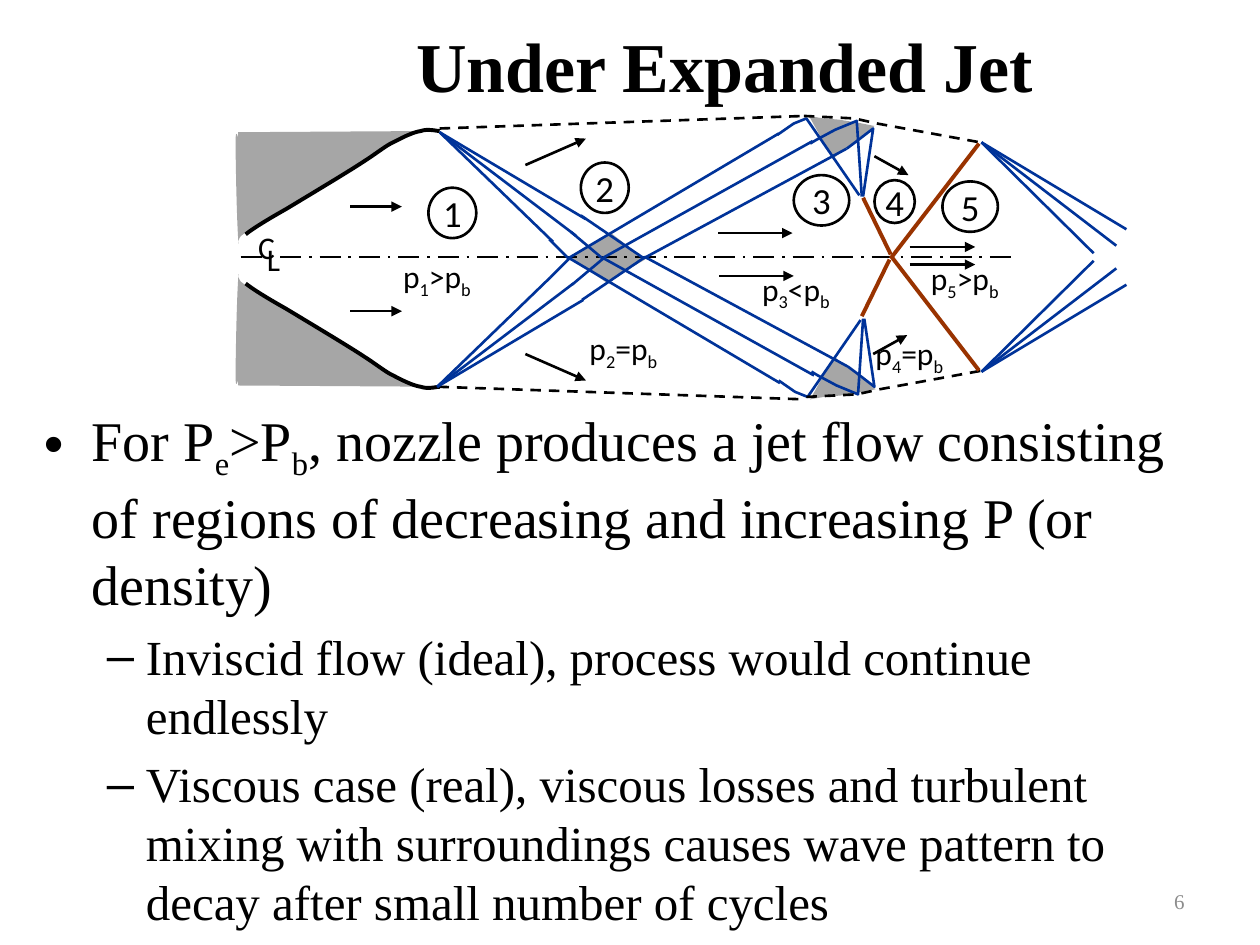
from dataclasses import dataclass

from lxml import etree
from pptx import Presentation
from pptx.dml.color import RGBColor
from pptx.enum.dml import MSO_LINE
from pptx.enum.shapes import MSO_CONNECTOR, MSO_SHAPE
from pptx.enum.text import MSO_ANCHOR, PP_ALIGN
from pptx.oxml.ns import qn
from pptx.util import Cm, Pt

STRAIGHT, ELLIPSE = MSO_CONNECTOR.STRAIGHT, MSO_SHAPE.OVAL
DASH, CENTRE_DASH = MSO_LINE.DASH, MSO_LINE.LONG_DASH_DOT
TOP, MIDDLE = MSO_ANCHOR.TOP, MSO_ANCHOR.MIDDLE
LEFT, CENTER, RIGHT = PP_ALIGN.LEFT, PP_ALIGN.CENTER, PP_ALIGN.RIGHT
SERIF, SANS = "Times New Roman", "Calibri"
COLORS = {"black": "000000", "white": "FFFFFF", "gray": "A6A6A6",
          "wave": "003399", "shock": "993300", "number": "8C8C8C"}
CURVE_STEPS = 8


@dataclass
class Stroke:
    """A line above the axis; its twin has y = mirror - y and x moved by shift."""
    points: list
    mirror: float = 0
    shift: float = 0
    color: str = "wave"
    width: float = 1.5
    dash: object = None
    arrow: bool = False


@dataclass
class Area:
    """A gray region and the rule for its twin below the axis."""
    points: list
    mirror: float = 0
    shift: float = 0


@dataclass
class Region:
    """A numbered ellipse."""
    number: str
    left: float
    top: float
    width: float
    height: float = 0.4


@dataclass
class Label:
    """A text box; every second part between bars is a subscript."""
    text: str
    left: float
    top: float
    width: float
    height: float = 0.5
    size: float = 18
    font: str = SANS
    color: str = "black"
    bold: bool = False
    align: object = LEFT
    anchor: object = TOP


@dataclass
class Bullet:
    """A bulleted paragraph with its indents in inches."""
    text: str
    level: int
    mark: str
    margin: float
    hanging: float
    size: float


def inch(value: float) -> int:
    """Turn inches into a length."""
    return Cm(value * 2.54)


def rgb(name: str) -> RGBColor:
    """Look up a named colour."""
    return RGBColor.from_string(COLORS[name])


def curve(points: list) -> list:
    """Sample a chain of cubic curves given as a start and triples."""
    result = [points[0]]
    for first in range(0, len(points) - 1, 3):
        corners = points[first:first + 4]
        for step in range(1, CURVE_STEPS + 1):
            t = step / CURVE_STEPS
            weights = ((1 - t) ** 3, 3 * t * (1 - t) ** 2, 3 * t * t * (1 - t), t ** 3)
            result.append(tuple(sum(w * c[axis] for w, c in zip(weights, corners))
                                for axis in (0, 1)))
    return result


def both_sides(item) -> list:
    """Give the points of an item and, if it has one, of its twin."""
    twin = [(x + item.shift, item.mirror - y) for x, y in item.points]
    return [item.points, twin] if item.mirror else [item.points]


def outline(page, points: list, closed: bool):
    """Build a freeform through the points."""
    lengths = [(inch(x), inch(y)) for x, y in points]
    builder = page.shapes.build_freeform(*lengths[0])
    builder.add_line_segments(lengths[1:], close=closed)
    shape = builder.convert_to_shape()
    shape.shadow.inherit = False
    return shape


def draw_area(page, area: Area) -> None:
    """Draw a gray area and its twin."""
    for points in both_sides(area):
        shape = outline(page, points, True)
        shape.fill.solid()
        shape.fill.fore_color.rgb = rgb("gray")
        shape.line.fill.background()


def draw_stroke(page, stroke: Stroke) -> None:
    """Draw a stroke and its twin."""
    for points in both_sides(stroke):
        if len(points) == 2:
            start, end = points
            shape = page.shapes.add_connector(STRAIGHT, *map(inch, start + end))
            etree.SubElement(shape.line._get_or_add_ln().getparent(), qn("a:effectLst"))
        else:
            shape = outline(page, points, False)
            shape.fill.background()
        shape.line.color.rgb = rgb(stroke.color)
        shape.line.width = Pt(stroke.width)
        if stroke.dash:
            shape.line.dash_style = stroke.dash
        if stroke.arrow:
            etree.SubElement(shape.line._get_or_add_ln(), qn("a:tailEnd"), type="triangle")


def write(para, text: str, size: float, font: str, color: str, bold: bool = False) -> None:
    """Fill a paragraph with spans, lowering every second one."""
    for index, part in enumerate(text.split("|")):
        if part:
            span = para.add_run()
            span.text = part
            span.font.size, span.font.name, span.font.bold = Pt(size), font, bold
            span.font.color.rgb = rgb(color)
            if index % 2:
                span.font._element.set("baseline", "-25000")


def draw_region(page, region: Region) -> None:
    """Draw a numbered ellipse."""
    shape = page.shapes.add_shape(ELLIPSE, *map(inch, (region.left, region.top, region.width, region.height)))
    shape.shadow.inherit = False
    shape.fill.solid()
    shape.fill.fore_color.rgb = rgb("white")
    shape.line.color.rgb = rgb("black")
    shape.line.width = Pt(1.5)
    frame = shape.text_frame
    frame.margin_left = frame.margin_right = frame.margin_top = frame.margin_bottom = 0
    frame.word_wrap, frame.vertical_anchor = False, MIDDLE
    frame.paragraphs[0].alignment = CENTER
    write(frame.paragraphs[0], region.number, 21, SANS, "black")


def draw_label(page, label: Label) -> None:
    """Draw a one-paragraph text box."""
    box = page.shapes.add_textbox(*map(inch, (label.left, label.top, label.width, label.height)))
    box.text_frame.word_wrap = True
    box.text_frame.vertical_anchor = label.anchor
    para = box.text_frame.paragraphs[0]
    para.alignment = label.align
    write(para, label.text, label.size, label.font, label.color, label.bold)


def draw_bullets(page, bullets: list) -> None:
    """Draw the body text."""
    frame = page.shapes.add_textbox(*map(inch, (0.25, 3.17, 9.25, 3.92))).text_frame
    frame.word_wrap = True
    for index, bullet in enumerate(bullets):
        para = frame.add_paragraph() if index else frame.paragraphs[0]
        para.level = bullet.level
        if index:
            para.space_before = Pt(bullet.size * 0.2)
        properties = para._p.get_or_add_pPr()
        properties.set("marL", str(inch(bullet.margin)))
        properties.set("indent", str(-inch(bullet.hanging)))
        etree.SubElement(properties, qn("a:buFont"), typeface="Arial")
        etree.SubElement(properties, qn("a:buChar"), char=bullet.mark)
        write(para, bullet.text, bullet.size, SERIF, "black")


def fan(start: tuple, ends: list, mirror: float, shift: float) -> list:
    """Give the expansion waves that leave one nozzle lip."""
    return [Stroke([start, end], mirror, shift) for end in ends]


def arrow(start: tuple, end: tuple, mirror: float, shift: float = 0) -> Stroke:
    """Give a flow arrow."""
    return Stroke([start, end], mirror, shift, "black", arrow=True)


WALL = [(1.95, 1.86), (2, 1.82), (2.11, 1.75), (2.27, 1.66), (2.42, 1.57), (2.72, 1.39),
        (2.86, 1.3), (3, 1.21), (3.03, 1.18), (3.1, 1.14), (3.18, 1.1), (3.27, 1.05),
        (3.34, 1.04), (3.4, 1.02), (3.46, 1.04), (3.49, 1.04)]
BLOCK = [(1.89, 1.05), (1.89, 1.05), (1.89, 1.07), (1.89, 1.09), (1.89, 1.1), (1.87, 1),
         (1.87, 1.13), (1.87, 1.26), (1.88, 1.76), (1.89, 1.88), (1.9, 2), (1.87, 1.89)]
AREAS = [
    Area([(6.42, 0.92), (6.61, 1.26), (6.94, 1), (6.84, 0.98), (6.66, 0.95), (6.53, 0.94)], 4.09, 0.01),
    Area([(4.52, 2.04), (4.85, 1.85), (5.12, 2.06), (4.81, 2.24)]),
    Area(curve(BLOCK + [(x - 0.02, y) for x, y in WALL]), 4.11),
]
STROKES = [
    Stroke([(6.17, 1.07), (6.3, 0.98), (6.4, 0.94), (6.82, 1.55)], 4.09, 0.01),
    Stroke([(6.43, 1.14), (6.48, 1.11), (6.63, 1.03), (6.8, 0.96), (6.84, 1.56)], 4.09, 0.01),
    Stroke([(6.72, 1.18), (6.8, 1.12), (6.93, 1.02), (6.85, 1.56)], 4.09, 0.01),
    Stroke([(6.38, 0.92), (6.78, 0.94), (6.96, 0.98), (7.78, 1.13)], 4.07, 0.02, "black", dash=DASH),
    Stroke([(3.49, 1.02), (6.4, 0.92)], 4.09, -0.01, "black", dash=DASH),
    Stroke(curve(WALL), 4.11, 0, "black", 2.25),
    Stroke([(1.91, 2.04), (8.06, 2.04)], color="black", dash=CENTRE_DASH),
    *fan((3.49, 1.05), [(4.39, 1.92), (4.57, 1.87), (4.65, 1.74)], 4.12, -0.02),
    *fan((7.79, 1.13), [(8.68, 2.01), (8.86, 1.95), (8.94, 1.82)], 4.08, 0),
    Stroke([(4.36, 1.9), (4.51, 2.05), (6.18, 1.06)], 4.1, 0.01),
    Stroke([(4.53, 1.84), (4.78, 2.05), (6.45, 1.12)], 4.1, 0.01),
    Stroke([(4.61, 1.71), (5.11, 2.05), (6.72, 1.18)], 4.09, 0.01),
    Stroke([(7.77, 1.14), (7.07, 2.05)], 4.08, 0, "shock", 2.25),
    Stroke([(6.85, 1.57), (7.07, 2.02)], 4.08, -0.01, "shock", 2.25),
    arrow((2.78, 1.64), (3.19, 1.64), 4.11), arrow((4.17, 1.31), (4.65, 1.1), 4.12),
    arrow((5.7, 1.85), (6.29, 1.85), 4.04, 0.01), arrow((7.22, 1.96), (7.74, 1.96), 4.06),
    arrow((6.94, 1.24), (7.21, 1.39), 4.05, -0.01),
]
REGIONS = [Region("1", 3.4, 1.49, 0.38), Region("2", 4.61, 1.29, 0.38), Region("3", 6.3, 1.39, 0.44),
           Region("4", 6.94, 1.43, 0.32, 0.34), Region("5", 7.48, 1.44, 0.44)]
LABELS = [
    Label("Under Expanded Jet", 2, 0.15, 7.5, 0.73, 40, SERIF, bold=True, align=CENTER, anchor=MIDDLE),
    Label("p|1|>p|b", 3.1, 1.99, 1.19), Label("p|2|=p|b", 4.58, 2.56, 1.19),
    Label("p|3|<p|b", 5.95, 2.09, 0.94), Label("p|4|=p|b", 6.85, 2.6, 0.94),
    Label("p|5|>p|b", 7.29, 2.01, 0.94), Label("C", 1.95, 1.76, 0.42), Label("L", 2.02, 1.86, 0.38),
    Label("6", 7.17, 6.95, 2.33, 0.4, 12, SERIF, "number", align=RIGHT, anchor=MIDDLE),
]
BULLETS = [
    Bullet("For P|e|>P|b|, nozzle produces a jet flow consisting of regions of decreasing "
           "and increasing P (or density)", 0, "•", 0.38, 0.38, 32),
    Bullet("Inviscid flow (ideal), process would continue endlessly", 1, "–", 0.81, 0.31, 28),
    Bullet("Viscous case (real), viscous losses and turbulent mixing with surroundings causes "
           "wave pattern to decay after small number of cycles", 1, "–", 0.81, 0.31, 28),
]


def main() -> None:
    """Build the slide and save it."""
    deck = Presentation()
    deck.slide_width, deck.slide_height = inch(10), inch(7.5)
    page = deck.slides.add_slide(deck.slide_layouts[6])
    for draw, items in ((draw_area, AREAS), (draw_stroke, STROKES),
                        (draw_region, REGIONS), (draw_label, LABELS)):
        for item in items:
            draw(page, item)
    draw_bullets(page, BULLETS)
    deck.save("out.pptx")


if __name__ == "__main__":
    main()
